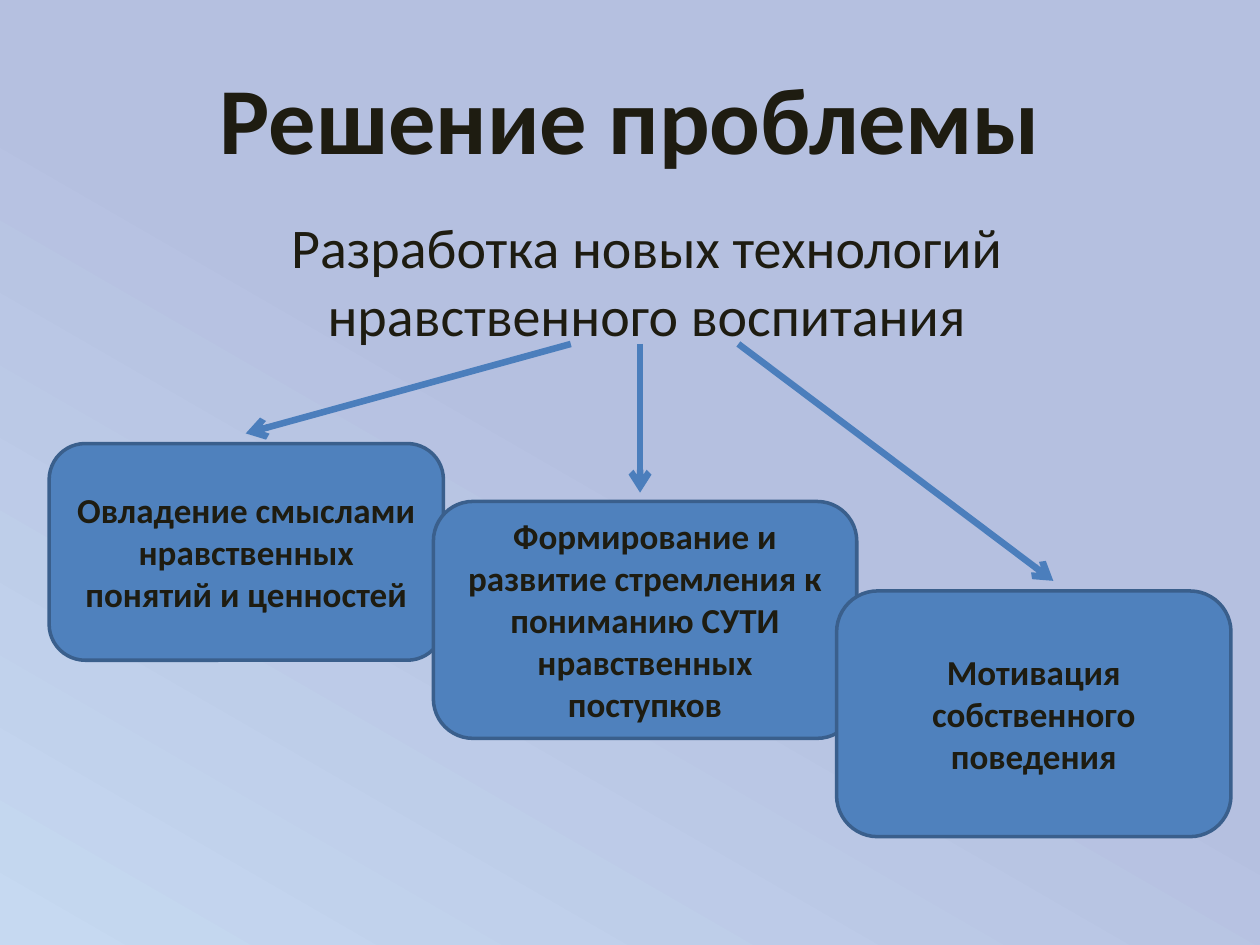
from pptx import Presentation
from pptx.dml.color import RGBColor as RGB
from pptx.enum.shapes import MSO_CONNECTOR as CONN, MSO_SHAPE as SHAPE
from pptx.enum.text import MSO_ANCHOR as ANCHOR, PP_ALIGN as ALIGN
from pptx.oxml.ns import qn
from pptx.util import Inches, Pt
from lxml.etree import SubElement

COLORS = {"ink": "1E1C11", "box": "4F81BD", "edge": "3A5F8C", "arrow": "4B7EBC",
          "sky": "B5C0E0", "light": "C6D9F1"}
COLS, ROWS = 100, 75


def rgb(name):
    return RGB.from_string(COLORS[name])


class Deck:
    """Slide builder that places elements on a grid of 100 columns by 75 rows."""

    font = {"name": "Calibri"}
    frame = {"word_wrap": True}

    def __init__(self, width, height):
        self.prs = Presentation()
        self.prs.slide_width, self.prs.slide_height = Inches(width), Inches(height)
        self.s = self.prs.slides.add_slide(self.prs.slide_layouts[6])

    def grid(self, *cells):
        units = (self.prs.slide_width / COLS, self.prs.slide_height / ROWS)
        return [round(c * units[i % 2]) for i, c in enumerate(cells)]

    def background(self, start, end, position, angle):
        fill = self.s.background.fill
        fill.gradient()
        fill.gradient_angle = angle
        for stop, color, at in zip(fill.gradient_stops, (start, end), (position, 1)):
            stop.color.rgb, stop.position = rgb(color), at

    def label(self, sp, text, font, frame):
        tf = sp.text_frame
        for key, value in {**self.frame, **frame}.items():
            setattr(tf, key, value)
        p = tf.paragraphs[0]
        p.alignment = ALIGN.CENTER
        r = p.add_run()
        r.text = text
        for key, value in {**self.font, **font}.items():
            setattr(r.font, key, value)
        r.font.color.rgb = rgb("ink")

    def text(self, cells, text, font, **frame):
        self.label(self.s.shapes.add_textbox(*self.grid(*cells)), text, font, frame)

    def box(self, cells, text):
        sp = self.s.shapes.add_shape(SHAPE.ROUNDED_RECTANGLE, *self.grid(*cells))
        sp.shadow.inherit = False
        sp.fill.solid()
        sp.fill.fore_color.rgb = rgb("box")
        sp.line.color.rgb, sp.line.width = rgb("edge"), Pt(2)
        self.label(sp, text, {"size": Pt(20), "bold": True},
                   {"vertical_anchor": ANCHOR.MIDDLE})

    def arrow(self, cells):
        cx = self.s.shapes.add_connector(CONN.STRAIGHT, *self.grid(*cells))
        cx.line.color.rgb, cx.line.width = rgb("arrow"), Pt(3.75)
        props = cx._element.spPr
        SubElement(props.find(qn("a:ln")), qn("a:tailEnd"), type="arrow")
        SubElement(props, qn("a:effectLst"))


def main():
    deck = Deck(10, 7.5)
    deck.background("sky", "light", 0.48, 240)
    deck.text((5, 3, 90, 12.5), "Решение проблемы", {"size": Pt(54), "bold": True},
              vertical_anchor=ANCHOR.MIDDLE)
    deck.text((3.9, 16.4, 91.1, 50.6), "Разработка новых технологий нравственного воспитания",
              {"size": Pt(32)}, margin_left=Inches(0.98), margin_right=Inches(0.6))
    steps = [
        ((3.9, 35.2, 31.3, 17.2), "Овладение смыслами нравственных понятий и ценностей"),
        ((34.4, 39.8, 33.6, 18.8),
         "Формирование и развитие стремления к пониманию СУТИ нравственных поступков"),
        ((66.4, 46.9, 31.3, 19.5), "Мотивация собственного поведения"),
    ]
    for cells, caption in steps:
        deck.box(cells, caption)
    for start, end in [(45.3, (19.5, 34.4)), (50.8, (50.8, 39.1)), (58.6, (83.6, 46.1))]:
        deck.arrow((start, 27.3, *end))
    deck.prs.save("out.pptx")


if __name__ == "__main__":
    main()
